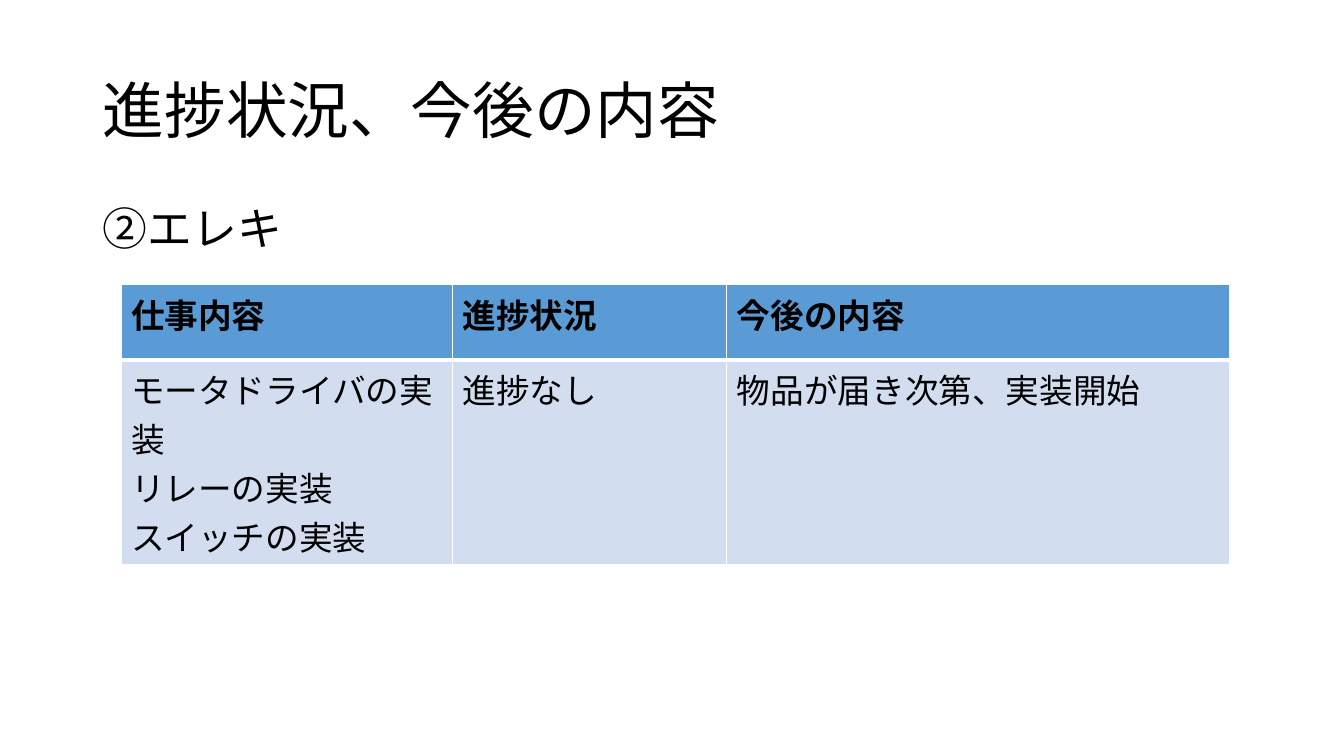
from dataclasses import dataclass

from lxml.etree import SubElement
from pptx import Presentation
from pptx.dml.color import RGBColor
from pptx.enum.lang import MSO_LANGUAGE_ID
from pptx.enum.text import MSO_ANCHOR, MSO_AUTO_SIZE, PP_ALIGN
from pptx.oxml.ns import qn
from pptx.util import Emu, Pt

EMU_PER_PX = 9144
TITLE_ONLY = 5


@dataclass(frozen=True)
class Theme:
    font: str = "Calibri"
    text: str = "000000"
    header_fill: str = "5B9BD5"
    body_fill: str = "D2DEEF"
    border: str = "FFFFFF"
    title_size: int = 44
    section_size: int = 32
    table_size: int = 24
    thin: int = 1
    thick: int = 3


THEME = Theme()

COLUMN_WIDTHS = (329, 272, 499)
ROW_HEIGHTS = (75, 203)
TASK_ROWS = (
    ("仕事内容", "進捗状況", "今後の内容"),
    (
        "モータドライバの実装\nリレーの実装\nスイッチの実装",
        "進捗なし",
        "物品が届き次第、実装開始",
    ),
)


def px(length):
    return Emu(length * EMU_PER_PX)


def write_text(frame, text, size, bold=False, **paragraph_format):
    """Write one paragraph per line of text, all in the same format."""
    frame.text = text
    font_format = {
        "name": THEME.font,
        "size": Pt(size),
        "bold": bold,
        "language_id": MSO_LANGUAGE_ID.JAPANESE,
    }
    for paragraph in frame.paragraphs:
        paragraph.alignment = PP_ALIGN.LEFT
        for attribute, value in paragraph_format.items():
            setattr(paragraph, attribute, value)
        for run in paragraph.runs:
            for attribute, value in font_format.items():
                setattr(run.font, attribute, value)
            run.font.color.rgb = RGBColor.from_string(THEME.text)


def set_title(slide, text, left, top, width, height):
    title = slide.shapes.title
    title.left, title.top, title.width, title.height = map(px, (left, top, width, height))
    title.text_frame.vertical_anchor = MSO_ANCHOR.MIDDLE
    title.text_frame.auto_size = MSO_AUTO_SIZE.NONE
    write_text(title.text_frame, text, THEME.title_size, line_spacing=0.9)


def add_section(slide, text, left, top, width, height):
    section = slide.shapes.add_textbox(*map(px, (left, top, width, height)))
    section.text_frame.word_wrap = True
    write_text(section.text_frame, text, THEME.section_size,
               line_spacing=0.9, space_before=Pt(10))


def set_borders(cell, top, bottom):
    """Draw all four cell borders; top and bottom are widths in points."""
    properties = cell._tc.get_or_add_tcPr()
    widths = {"lnL": THEME.thin, "lnR": THEME.thin, "lnT": top, "lnB": bottom}
    for edge, width in widths.items():
        line = SubElement(properties, qn(f"a:{edge}"), w=str(Pt(width)))
        fill = SubElement(line, qn("a:solidFill"))
        SubElement(fill, qn("a:srgbClr"), val=THEME.border)


def add_task_table(slide, left, top):
    table = slide.shapes.add_table(
        len(TASK_ROWS), len(COLUMN_WIDTHS), px(left), px(top),
        px(sum(COLUMN_WIDTHS)), px(sum(ROW_HEIGHTS)),
    ).table
    for column, width in zip(table.columns, COLUMN_WIDTHS):
        column.width = px(width)
    for row_index, (row, height) in enumerate(zip(table.rows, ROW_HEIGHTS)):
        row.height = px(height)
        is_header = row_index == 0
        fill = THEME.header_fill if is_header else THEME.body_fill
        edges = (THEME.thin, THEME.thick) if is_header else (THEME.thick, THEME.thin)
        for cell, text in zip(row.cells, TASK_ROWS[row_index]):
            set_borders(cell, *edges)
            cell.fill.solid()
            cell.fill.fore_color.rgb = RGBColor.from_string(fill)
            write_text(cell.text_frame, text, THEME.table_size, bold=is_header)


def main():
    presentation = Presentation()
    presentation.slide_width, presentation.slide_height = px(1333), px(750)
    slide = presentation.slides.add_slide(presentation.slide_layouts[TITLE_ONLY])
    set_title(slide, "進捗状況、今後の内容", 92, 40, 1150, 145)
    add_section(slide, "②エレキ", 92, 200, 1150, 476)
    add_task_table(slide, 120, 282)
    presentation.save("out.pptx")


if __name__ == "__main__":
    main()
